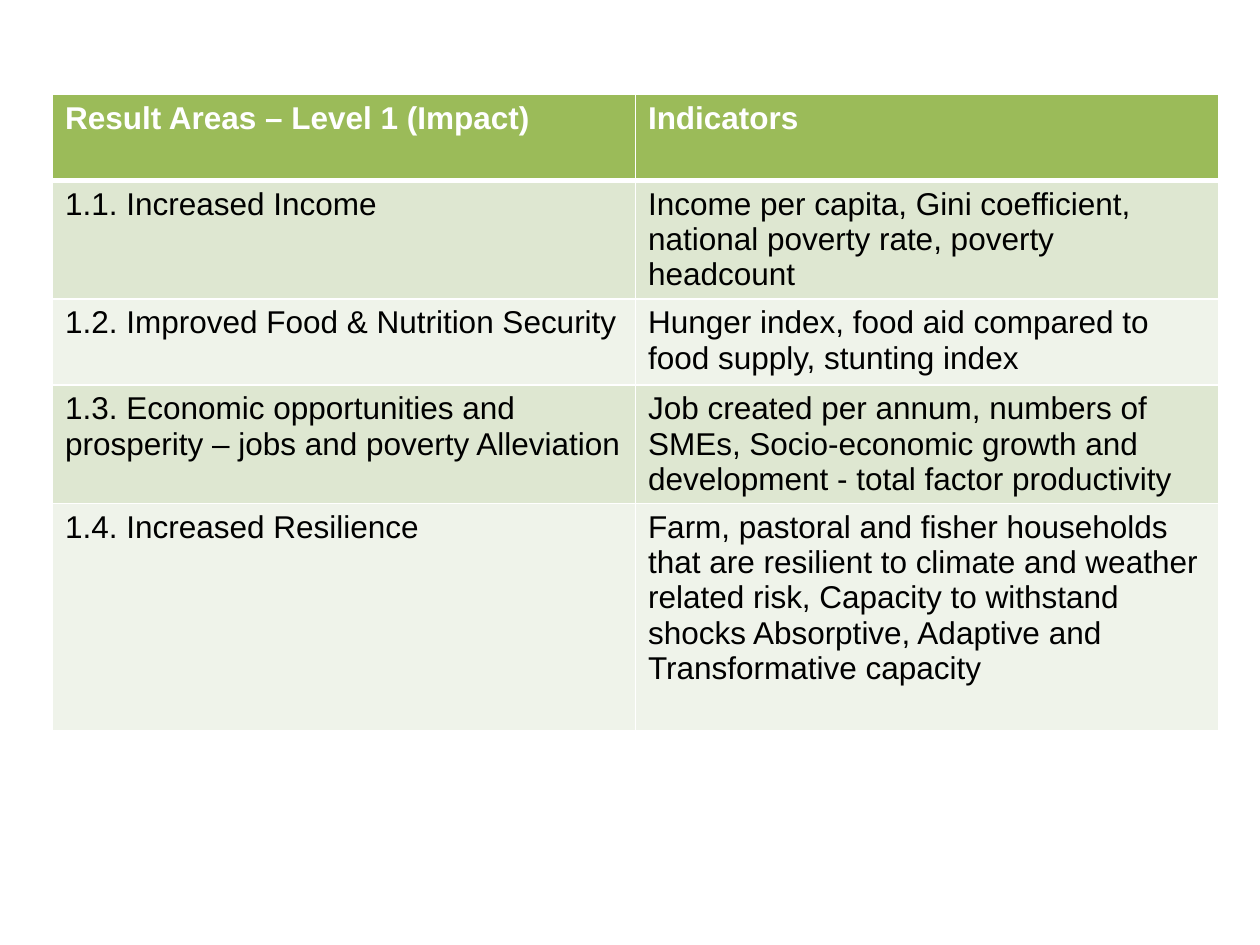
from lxml import etree
from pptx import Presentation
from pptx.dml.color import RGBColor
from pptx.enum.text import MSO_ANCHOR
from pptx.oxml.ns import qn
from pptx.util import Cm, Pt

TOP = MSO_ANCHOR.TOP
FONT = "Arial"
COLORS = {
    "header": "9BBB59",
    "band_dark": "DEE7D1",
    "band_light": "EFF3EA",
    "white": "FFFFFF",
    "black": "000000",
}
COL_WIDTH = 11.75
ROW_HEIGHTS = [1.73, 2.39, 1.73, 2.39, 4.59]
ROWS = [
    ("Result Areas – Level 1 (Impact)", "Indicators"),
    ("1.1. Increased Income",
     "Income per capita, Gini coefficient, national poverty rate, poverty headcount"),
    ("1.2. Improved Food & Nutrition Security",
     "Hunger index, food aid compared to food supply, stunting index"),
    ("1.3. Economic opportunities and prosperity – jobs and poverty Alleviation",
     "Job created per annum, numbers of SMEs, Socio-economic growth and "
     "development - total factor productivity"),
    ("1.4. Increased Resilience",
     "Farm, pastoral and fisher households that are resilient to climate and "
     "weather related risk, Capacity to withstand shocks Absorptive, Adaptive "
     "and Transformative capacity"),
]


def rgb(name):
    return RGBColor.from_string(COLORS[name])


def set_text(tf, text, size=18, color="black", bold=False):
    r = tf.paragraphs[0].add_run()
    r.text = text
    r.font.name = FONT
    r.font.size = Pt(size)
    r.font.bold = bold
    r.font.color.rgb = rgb(color)


def set_borders(cell, top=1, bottom=1, color="white"):
    """Draw all four cell edges; widths are in points."""
    tc_pr = cell._tc.get_or_add_tcPr()
    for tag, width in (("lnL", 1), ("lnR", 1), ("lnT", top), ("lnB", bottom)):
        ln = etree.SubElement(tc_pr, qn(f"a:{tag}"), w=str(Pt(width)))
        fill = etree.SubElement(ln, qn("a:solidFill"))
        etree.SubElement(fill, qn("a:srgbClr"), val=COLORS[color])


def fill_cell(cell, color):
    cell.fill.solid()
    cell.fill.fore_color.rgb = rgb(color)


def add_results_table(slide, left, top):
    cols = len(ROWS[0])
    table = slide.shapes.add_table(
        len(ROWS), cols, Cm(left), Cm(top),
        Cm(COL_WIDTH * cols), Cm(sum(ROW_HEIGHTS))).table
    for column in table.columns:
        column.width = Cm(COL_WIDTH)
    for i, (texts, height) in enumerate(zip(ROWS, ROW_HEIGHTS)):
        table.rows[i].height = Cm(height)
        is_header = i == 0
        band = "band_dark" if i % 2 else "band_light"
        for j, text in enumerate(texts):
            cell = table.cell(i, j)
            cell.vertical_anchor = TOP
            set_borders(cell, top=3 if i == 1 else 1, bottom=3 if is_header else 1)
            fill_cell(cell, "header" if is_header else band)
            set_text(cell.text_frame, text, bold=is_header,
                     color="white" if is_header else "black")


def main():
    prs = Presentation()
    prs.slide_width, prs.slide_height = Cm(25.4), Cm(19.05)
    slide = prs.slides.add_slide(prs.slide_layouts[6])
    add_results_table(slide, left=1.06, top=1.91)
    prs.save("out.pptx")


if __name__ == "__main__":
    main()
